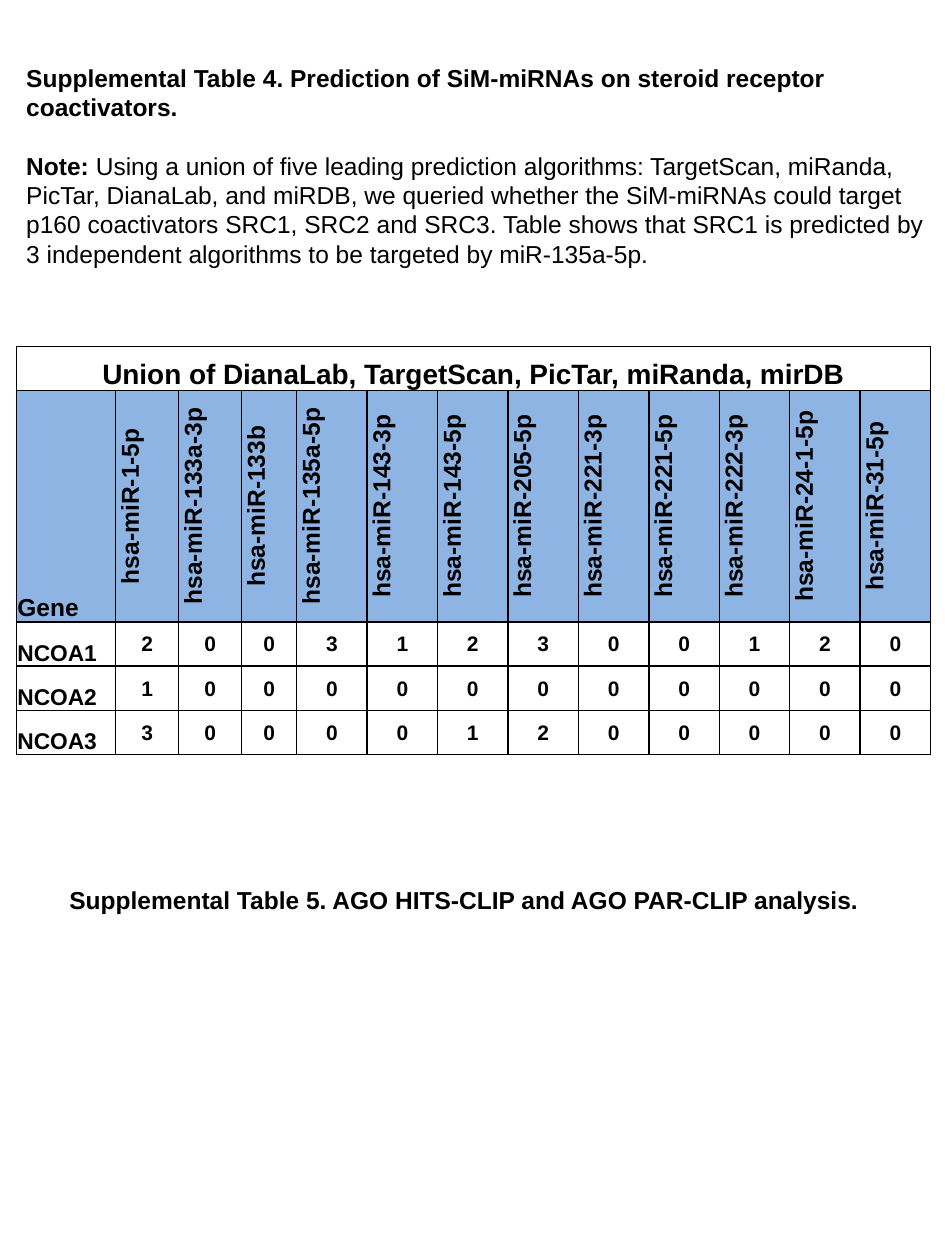
from lxml.etree import SubElement
from pptx import Presentation
from pptx.dml.color import RGBColor
from pptx.enum.text import MSO_ANCHOR, MSO_AUTO_SIZE, PP_ALIGN
from pptx.oxml.ns import qn
from pptx.util import Cm, Pt

TABLE_4_CAPTION = "Supplemental Table 4. Prediction of SiM-miRNAs on steroid receptor coactivators."
NOTE_LABEL = "Note: "
NOTE = (
    "Using a union of five leading prediction algorithms: TargetScan, miRanda, PicTar, "
    "DianaLab, and miRDB, we queried whether the SiM-miRNAs could target p160 coactivators "
    "SRC1, SRC2 and SRC3. Table shows that SRC1 is predicted by 3 independent algorithms "
    "to be targeted by miR-135a-5p."
)
TABLE_5_CAPTION = "Supplemental Table 5. AGO HITS-CLIP and AGO PAR-CLIP analysis."

TABLE_TITLE = "Union of DianaLab, TargetScan, PicTar, miRanda, mirDB"
MICRO_RNAS = ["1-5p", "133a-3p", "133b", "135a-5p", "143-3p", "143-5p",
              "205-5p", "221-3p", "221-5p", "222-3p", "24-1-5p", "31-5p"]
PREDICTIONS = {
    "NCOA1": [2, 0, 0, 3, 1, 2, 3, 0, 0, 1, 2, 0],
    "NCOA2": [1, 0, 0, 0, 0, 0, 0, 0, 0, 0, 0, 0],
    "NCOA3": [3, 0, 0, 0, 0, 1, 2, 0, 0, 0, 0, 0],
}
COLUMN_WIDTHS = [2, 1.27, 1.27, 1.11] + [1.42] * 9
ROW_HEIGHTS = [0.89, 4.67] + [0.89] * len(PREDICTIONS)
BLACK, WHITE, HEADER_BLUE = "000000", "FFFFFF", "8EB4E3"


def color(value):
    return RGBColor.from_string(value)


def write(paragraph, text, size=14, bold=True, align=PP_ALIGN.LEFT):
    paragraph.alignment = align
    run = paragraph.add_run()
    run.text = text
    run.font.name = "Arial"
    run.font.size = Pt(size)
    run.font.bold = bold
    run.font.color.rgb = color(BLACK)


def add_text_frame(slide, left, top, width, height):
    box = slide.shapes.add_textbox(Cm(left), Cm(top), Cm(width), Cm(height))
    frame = box.text_frame
    frame.word_wrap = True
    frame.auto_size = MSO_AUTO_SIZE.SHAPE_TO_FIT_TEXT
    frame.margin_left = frame.margin_right = Cm(0.13)
    frame.margin_top = frame.margin_bottom = Cm(0.07)
    return frame


def style_cell(cell, fill, anchor, vertical):
    """Set margins, black borders, fill and text direction."""
    cell.margin_left = cell.margin_right = cell.margin_top = Cm(0.02)
    cell.margin_bottom = 0
    cell.vertical_anchor = anchor
    properties = cell._tc.get_or_add_tcPr()
    if vertical:
        properties.set("vert", "vert270")
    for side in ("lnL", "lnR", "lnT", "lnB"):
        border = SubElement(properties, qn(f"a:{side}"), w=str(Pt(1)))
        SubElement(SubElement(border, qn("a:solidFill")), qn("a:srgbClr"), val=BLACK)
    cell.fill.solid()
    cell.fill.fore_color.rgb = color(fill)


def add_prediction_table(slide):
    header = ["Gene"] + [f"hsa-miR-{name}" for name in MICRO_RNAS]
    body = [[gene, *counts] for gene, counts in PREDICTIONS.items()]
    rows = [[TABLE_TITLE] + [""] * len(MICRO_RNAS), header] + body
    frame = slide.shapes.add_table(
        len(rows), len(header), Cm(0.33), Cm(6.98),
        Cm(sum(COLUMN_WIDTHS)), Cm(sum(ROW_HEIGHTS)))
    table = frame.table
    for column, width in zip(table.columns, COLUMN_WIDTHS):
        column.width = Cm(width)
    for row, height in zip(table.rows, ROW_HEIGHTS):
        row.height = Cm(height)

    for i, values in enumerate(rows):
        for j, value in enumerate(values):
            cell = table.cell(i, j)
            at_bottom = i == 0 or j == 0
            style_cell(cell, HEADER_BLUE if i == 1 else WHITE,
                       MSO_ANCHOR.BOTTOM if at_bottom else MSO_ANCHOR.MIDDLE,
                       vertical=i == 1 and j > 0)
            if value == "":
                continue
            size = {0: 16, 1: 14}.get(i, 13 if j == 0 else 12)
            align = PP_ALIGN.LEFT if i > 0 and j == 0 else PP_ALIGN.CENTER
            write(cell.text_frame.paragraphs[0], str(value), size=size, align=align)
    table.cell(0, 0).merge(table.cell(0, len(header) - 1))


presentation = Presentation()
presentation.slide_width = Cm(19.05)
presentation.slide_height = Cm(25.4)
slide = presentation.slides.add_slide(presentation.slide_layouts[6])

introduction = add_text_frame(slide, 0.4, 1.2, 18.42, 4.31)
write(introduction.paragraphs[0], TABLE_4_CAPTION)
note = introduction.add_paragraph()
note.space_before = Pt(16.5)
write(note, NOTE_LABEL)
write(note, NOTE, bold=False)

add_prediction_table(slide)

closing = add_text_frame(slide, 1.27, 17.78, 16.66, 0.74)
write(closing.paragraphs[0], TABLE_5_CAPTION)

presentation.save("out.pptx")
